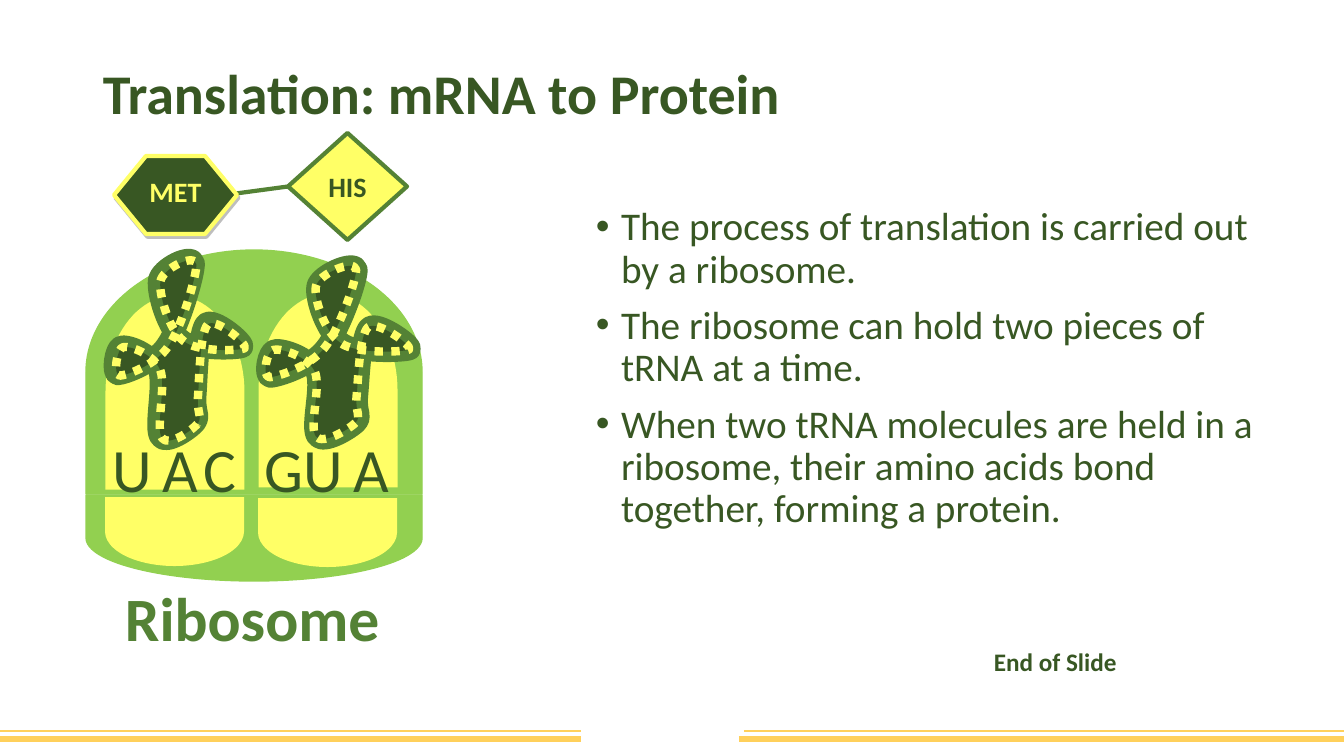
from lxml import etree
from pptx import Presentation
from pptx.dml.color import RGBColor
from pptx.enum.dml import MSO_LINE
from pptx.enum.shapes import MSO_CONNECTOR, MSO_SHAPE
from pptx.enum.text import MSO_ANCHOR, MSO_AUTO_SIZE, PP_ALIGN
from pptx.oxml.ns import qn
from pptx.util import Emu, Pt

DELAY = MSO_SHAPE.FLOWCHART_DELAY
DIAMOND = MSO_SHAPE.FLOWCHART_DECISION
HEXAGON = MSO_SHAPE.HEXAGON
STRAIGHT = MSO_CONNECTOR.STRAIGHT
DOTTED = MSO_LINE.ROUND_DOT
TOP, MIDDLE = MSO_ANCHOR.TOP, MSO_ANCHOR.MIDDLE
GROW = MSO_AUTO_SIZE.SHAPE_TO_FIT_TEXT
CENTER = PP_ALIGN.CENTER

DARK = RGBColor(0x38, 0x57, 0x23)
GREEN = RGBColor(0x54, 0x82, 0x35)
LIME = RGBColor(0x92, 0xD0, 0x50)
YELLOW = RGBColor(0xFF, 0xFF, 0x66)
GOLD = RGBColor(0xFF, 0xD0, 0x5B)
SHADOW = RGBColor(0x7F, 0x7F, 0x7F)

WIDTH, HEIGHT = 1344, 756
SCALE = 12192000 / WIDTH

TRNA_GRID = (153, 183)
TRNA_OUTLINE = [
    (63, 20),
    (70, 14), (97, 0), (103, 9),
    (110, 18), (94, 59), (100, 74),
    (106, 89), (131, 99), (139, 98),
    (146, 98), (153, 72), (145, 71),
    (137, 71), (104, 79), (89, 96),
    (73, 113), (52, 162), (52, 172),
    (53, 183), (90, 170), (93, 158),
    (96, 146), (87, 111), (72, 100),
    (58, 88), (10, 87), (5, 89),
    (0, 92), (35, 121), (44, 114),
    (53, 107), (57, 65), (60, 47),
    (63, 29), (56, 27), (63, 20),
]
BULLETS = [
    "The process of translation is carried out by a ribosome.",
    "The ribosome can hold two pieces of tRNA at a time.",
    "When two tRNA molecules are held in a ribosome, their amino acids "
    "bond together, forming a protein.",
]


def px(value):
    return Emu(round(value * SCALE))


class SlideBuilder:
    font = "Calibri"

    def __init__(self, slide):
        self.s = slide

    def set_run(self, p, text, size, color, bold=False, spacing=0):
        r = p.add_run()
        r.text = text
        fmt = {"name": self.font, "size": Pt(size), "bold": bold}
        for name, value in fmt.items():
            setattr(r.font, name, value)
        r.font.color.rgb = color
        if spacing:
            r._r.get_or_add_rPr().set("spc", str(spacing * 100))

    def set_paint(self, sp, fill, line, weight):
        sp.shadow.inherit = False
        sp.fill.solid()
        sp.fill.fore_color.rgb = fill
        if line is None:
            sp.line.fill.background()
        else:
            sp.line.color.rgb = line
            sp.line.width = Pt(weight)

    def line(self, start, end, color, weight):
        sp = self.s.shapes.add_connector(STRAIGHT, *map(px, start + end))
        sp.line.color.rgb = color
        sp.line.width = Pt(weight)
        etree.SubElement(sp._element.spPr, qn("a:effectLst"))

    def shape(self, kind, box, fill, line=None, weight=1, rotation=0, flip=False):
        sp = self.s.shapes.add_shape(kind, *map(px, box))
        self.set_paint(sp, fill, line, weight)
        sp.rotation = rotation
        if flip:
            sp._element.spPr.find(qn("a:xfrm")).set("flipH", "1")
        return sp

    def label(self, sp, text, color, anchor):
        tf = sp.text_frame
        tf.word_wrap = False
        tf.vertical_anchor = anchor
        p = tf.paragraphs[0]
        p.alignment = CENTER
        self.set_run(p, text, 20, color, True)

    def shadow(self, sp):
        effects = sp._element.spPr.find(qn("a:effectLst"))
        outer = etree.SubElement(effects, qn("a:outerShdw"), blurRad="0",
                                 dist=str(Pt(2.2)), dir=str(63 * 60000),
                                 algn="ctr", rotWithShape="0")
        color = etree.SubElement(outer, qn("a:srgbClr"), val=str(SHADOW))
        etree.SubElement(color, qn("a:alpha"), val="50000")

    def trna(self, box, line, weight, dash=None):
        left, top, width, height = box
        points = [(px(left + x * width / TRNA_GRID[0]), px(top + y * height / TRNA_GRID[1]))
                  for x, y in TRNA_OUTLINE]
        builder = self.s.shapes.build_freeform(*points[0])
        builder.add_line_segments(points[1:], close=True)
        sp = builder.convert_to_shape()
        segments = list(sp._element.iter(qn("a:lnTo")))
        for i in range(0, len(points) - 1, 3):
            curve = etree.Element(qn("a:cubicBezTo"))
            segments[i].addprevious(curve)
            for segment in segments[i:i + 3]:
                curve.append(segment[0])
                segment.getparent().remove(segment)
        self.set_paint(sp, DARK, line, weight)
        if dash is not None:
            sp.line.dash_style = dash
        sp.rotation = 176.1

    def text(self, box, runs, size, color=DARK, bold=False, wrap=False, anchor=TOP, grow=True):
        tf = self.s.shapes.add_textbox(*map(px, box)).text_frame
        fmt = {"word_wrap": wrap, "vertical_anchor": anchor}
        if grow:
            fmt["auto_size"] = GROW
        for name, value in fmt.items():
            setattr(tf, name, value)
        for text, spacing in runs:
            self.set_run(tf.paragraphs[0], text, size, color, bold, spacing)
        return tf

    def bullets(self, box, items):
        tf = self.s.shapes.add_textbox(*map(px, box)).text_frame
        tf.word_wrap = True
        for i, item in enumerate(items):
            p = tf.add_paragraph() if i else tf.paragraphs[0]
            pPr = p._p.get_or_add_pPr()
            pPr.set("marL", "228600")
            pPr.set("indent", "-228600")
            etree.SubElement(pPr, qn("a:buFont"), typeface="Arial")
            etree.SubElement(pPr, qn("a:buChar"), char="•")
            fmt = {"line_spacing": 0.9, "space_before": Pt(10 if i else 0)}
            for name, value in fmt.items():
                setattr(p, name, value)
            self.set_run(p, item, 28, DARK)


def main():
    prs = Presentation()
    prs.slide_width, prs.slide_height = px(WIDTH), px(HEIGHT)
    b = SlideBuilder(prs.slides.add_slide(prs.slide_layouts[6]))

    for y, weight, right_start in ((739, 4.5, 739), (731, 1.5, 744)):
        b.line((0, y), (581, y), GOLD, weight)
        b.line((right_start, y), (WIDTH, y), GOLD, weight)

    title = b.text((93, 40, 1159, 113), [("Translation: mRNA to Protein", 0)], 40,
                   bold=True, wrap=True, anchor=MIDDLE, grow=False)
    title.paragraphs[0].line_spacing = 0.9

    b.shape(DELAY, (132, 204, 244, 336), LIME, LIME, rotation=270)
    for box in ((78, 323, 194, 139), (231, 321, 194, 139)):
        b.shape(DELAY, box, YELLOW, rotation=270)
    b.shape(DELAY, (211, 370, 86, 336), LIME, LIME, rotation=270, flip=True)
    for box in ((140, 462, 69, 139), (293, 463, 69, 139)):
        b.shape(DELAY, box, YELLOW, rotation=270, flip=True)

    b.bullets((586, 202, 682, 381), BULLETS)
    b.line((195, 199), (344, 179), GREEN, 3)

    b.trna((261, 260, 154, 184), GREEN, 15)
    b.trna((260, 260, 154, 184), YELLOW, 6, DOTTED)
    b.text((255, 426, 161, 85), [("GU", 0), (" A", -3)], 44)
    his = b.shape(DIAMOND, (288, 133, 119, 107), YELLOW, GREEN, 3)
    b.label(his, "HIS", DARK, MIDDLE)

    b.trna((109, 253, 138, 192), GREEN, 15)
    b.trna((111, 254, 138, 192), YELLOW, 6, DOTTED)
    b.text((103, 426, 151, 85), [("U", 0), (" A C", -3)], 44)
    met = b.shape(HEXAGON, (114, 156, 123, 78), DARK, YELLOW, 3)
    met.adjustments[0] = 0.41
    b.shadow(met)
    b.label(met, "MET", YELLOW, TOP)

    b.text((115, 575, 277, 85), [("Ribosome", 0)], 44, GREEN, bold=True)
    b.text((984, 641, 151, 40), [("End of Slide", 0)], 18, bold=True, wrap=True)
    prs.save("out.pptx")


if __name__ == "__main__":
    main()
